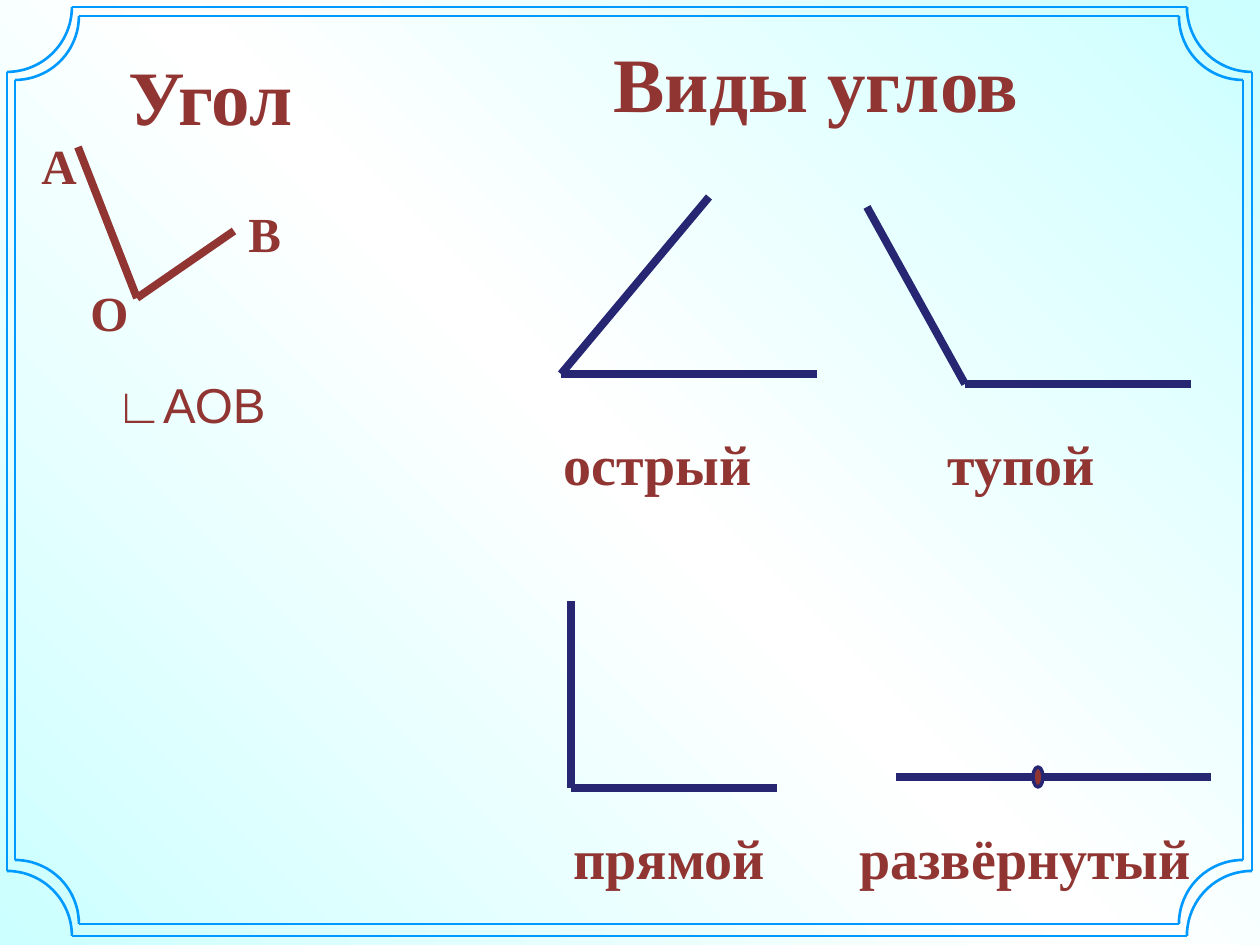
from copy import deepcopy
from math import cos, pi, sin

from lxml.etree import SubElement
from pptx import Presentation
from pptx.dml.color import RGBColor
from pptx.enum.shapes import MSO_CONNECTOR as Connector, MSO_SHAPE as Shape
from pptx.enum.text import MSO_ANCHOR as Anchor, MSO_AUTO_SIZE as AutoSize, PP_ALIGN as Align
from pptx.oxml.ns import qn
from pptx.util import Pt

PX = 914400 / 126
BROWN, NAVY, BLUE = "913533", "262673", "0099FF"
SERIF, SANS = "Times New Roman", "Arial"

# Vertex, ends of the sides, label, label box
ANGLE_KINDS = [
    ((561, 374), [(817, 374), (709, 197)], "острый", (551, 423, 246, 81)),
    ((965, 384), [(867, 207), (1191, 384)], "тупой", (935, 423, 217, 81)),
    ((571, 788), [(571, 601), (777, 788)], "прямой", (561, 817, 266, 81)),
    ((896, 777), [(1211, 777)], "развёрнутый", (847, 817, 374, 81)),
]
POINT_NAMES = [("А", 29, 129), ("О", 78, 276), ("В", 236, 197)]
# Left, top, right, bottom, corner radius
FRAMES = [(15, 16, 1243, 924, 64), (7, 7, 1252, 936, 65)]


def emu(px):
    return round(px * PX)


def color(hex_code):
    return RGBColor.from_string(hex_code)


def write(box, text, size=32, font=SERIF, bold=True, hex_code=BROWN):
    frame = box.text_frame
    frame.word_wrap = True
    frame.auto_size = AutoSize.SHAPE_TO_FIT_TEXT
    frame.vertical_anchor = Anchor.TOP
    paragraph = frame.paragraphs[0]
    paragraph.alignment = Align.LEFT
    run = paragraph.add_run()
    run.text = text
    run.font.size, run.font.name, run.font.bold = Pt(size), font, bold
    run.font.color.rgb = color(hex_code)


def add_label(shapes, text, bounds, **style):
    write(shapes.add_textbox(*map(emu, bounds)), text, **style)


def set_line(shape, hex_code, width):
    shape.line.color.rgb = color(hex_code)
    shape.line.width = Pt(width)


def add_segment(shapes, start, end, hex_code=NAVY, width=4.5):
    segment = shapes.add_connector(Connector.STRAIGHT, *map(emu, (*start, *end)))
    set_line(segment, hex_code, width)
    SubElement(segment.element.spPr, qn("a:effectLst"))


def add_angle(shapes, vertex, ends, hex_code=NAVY):
    for end in ends:
        add_segment(shapes, vertex, end, hex_code)


def add_dot(shapes, bounds):
    dot = shapes.add_shape(Shape.OVAL, *map(emu, bounds))
    dot.shadow.inherit = False
    dot.fill.solid()
    dot.fill.fore_color.rgb = color(BROWN)
    set_line(dot, NAVY, 2)


def add_corner(shapes, x, y, radius, x_side, y_side, steps=24):
    """Quarter circle around (x, y), on the side given by the two signs."""
    turns = [pi / 2 * step / steps for step in range(steps + 1)]
    points = [(emu(x + x_side * radius * cos(t)), emu(y + y_side * radius * sin(t)))
              for t in turns]
    builder = shapes.build_freeform(*points[0])
    builder.add_line_segments(points[1:], close=False)
    corner = builder.convert_to_shape()
    corner.shadow.inherit = False
    corner.fill.background()
    set_line(corner, BLUE, 1.5)


def add_frame(shapes, left, top, right, bottom, radius):
    for y, y_side in ((top, 1), (bottom, -1)):
        add_segment(shapes, (left + radius, y), (right - radius, y), BLUE, 1.5)
        for x, x_side in ((left, 1), (right, -1)):
            add_corner(shapes, x, y, radius, x_side, y_side)
    for x in (left, right):
        add_segment(shapes, (x, top + radius), (x, bottom - radius), BLUE, 1.5)


def set_background(slide):
    fill = slide.background.fill
    fill.gradient()
    fill.gradient_angle = 45
    first = slide.element.find(".//" + qn("a:gsLst"))[0]
    first.addnext(deepcopy(first))
    stops = zip(fill.gradient_stops, (0, 0.5, 1), ("CCFFFF", "FFFFFF", "CCFFFF"))
    for stop, position, hex_code in stops:
        stop.position = position
        stop.color.rgb = color(hex_code)


def main():
    deck = Presentation()
    deck.slide_width, deck.slide_height = emu(1260), emu(945)
    slide = deck.slides.add_slide(deck.slide_layouts[5])
    set_background(slide)

    # Headings
    title = slide.shapes.title
    title.left, title.top, title.width, title.height = map(emu, (601, 29, 462, 106))
    write(title, "Виды углов", size=44)
    add_label(slide.shapes, "Угол", (116, 42, 207, 106), size=44)

    # Angle AOB with its notation
    named_angle = slide.shapes.add_group_shape().shapes
    add_angle(named_angle, (137, 298), [(78, 147), (234, 231)], BROWN)
    for name, left, top in POINT_NAMES:
        add_label(named_angle, name, (left, top, 59, 72), size=28)
    add_label(named_angle, "∟АОВ", (103, 368, 186, 72), size=28, font=SANS, bold=False)

    # Kinds of angles
    for vertex, ends, label, bounds in ANGLE_KINDS:
        kind = slide.shapes.add_group_shape().shapes
        add_angle(kind, vertex, ends)
        add_label(kind, label, bounds)
    add_dot(kind, (1033, 767, 10, 20))

    # Double frame
    border = slide.shapes.add_group_shape().shapes
    for frame in FRAMES:
        add_frame(border, *frame)

    deck.save("out.pptx")


if __name__ == "__main__":
    main()
